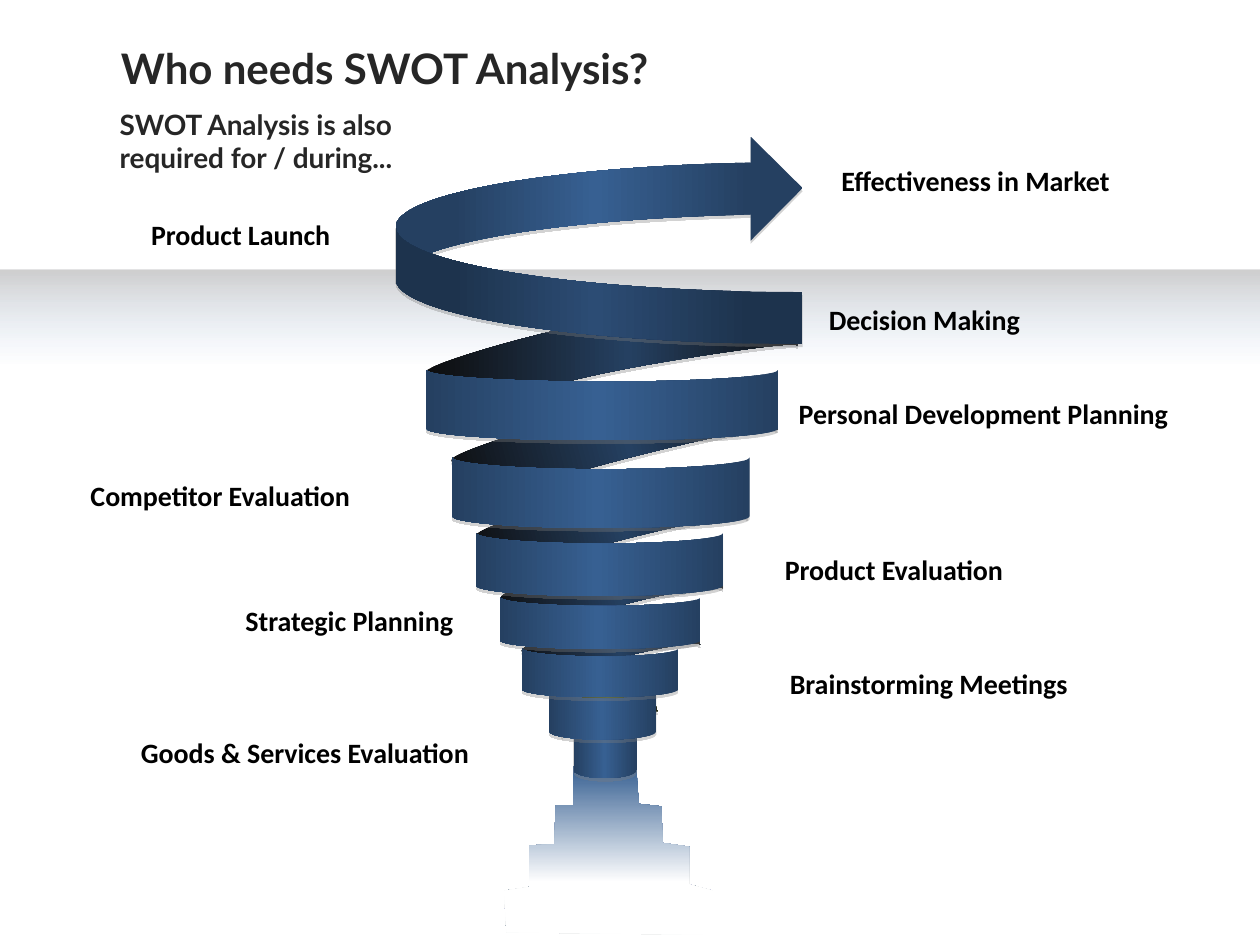
from lxml import etree
from pptx import Presentation
from pptx.dml.color import RGBColor
from pptx.enum.shapes import MSO_SHAPE
from pptx.enum.text import MSO_ANCHOR, MSO_AUTO_SIZE, PP_ALIGN
from pptx.oxml.ns import qn
from pptx.util import Inches, Pt

RECTANGLE = MSO_SHAPE.RECTANGLE
RIBBON = MSO_SHAPE.FLOWCHART_STORED_DATA
CURVED_ARROW = MSO_SHAPE.CURVED_LEFT_ARROW
LEFT = PP_ALIGN.LEFT
TOP, MIDDLE = MSO_ANCHOR.TOP, MSO_ANCHOR.MIDDLE
NO_AUTOFIT = MSO_AUTO_SIZE.NONE

COLORS = {
    "navy": "254061", "blue": "376092", "sky": "3F80CE", "black": "0D0D0D",
    "olive": "4F6228", "white": "FFFFFF", "shadow": "808080",
    "heading": "262626", "label": "000000",
}

# Gradient stops: position in percent, colour, opacity in percent
FRONT = [(0, "navy", 100), (51, "blue", 100), (100, "navy", 100)]
BACK = [(0, "black", 100), (54, "navy", 100), (100, "black", 100)]
BACK_OLIVE = [(0, "black", 100), (54, "olive", 100), (100, "black", 100)]
ARROW = [(0, "navy", 100), (13, "navy", 100), (51, "blue", 100),
         (86, "navy", 100), (100, "navy", 100)]
HORIZON = [(43, "sky", 0), (100, "black", 20)]
REFLECTION = [(0, "blue", 100), (69, "white", 100), (100, "white", 100)]

REFLECTION_OUTLINE = [
    (5.66, 7.42), (5.66, 7.07), (5.47, 7.02), (5.47, 6.72), (5.26, 6.69),
    (5.25, 6.4), (5.07, 6.38), (5.05, 6.08), (4.55, 6.08), (4.55, 6.39),
    (4.41, 6.39), (4.4, 6.7), (4.2, 6.71), (4.2, 7.04), (4, 7.07), (4.02, 7.4),
]
# Bezier curves along the lower and upper edge of the widest back ribbon
BACK_RIBBON_CURVES = [
    [(3.48, 3.35), (3.47, 3.3), (4.32, 3.06), (4.8, 2.96)],
    [(4.8, 2.96), (5.27, 2.86), (6.32, 2.7), (6.33, 2.74)],
    [(6.33, 2.74), (6.3, 2.61), (6.38, 2.5), (6.35, 2.37)],
    [(6.35, 2.37), (6.34, 2.32), (5.2, 2.46), (4.71, 2.56)],
    [(4.71, 2.56), (4.21, 2.65), (3.37, 2.9), (3.38, 2.95)],
]

# Ribbons from back to front, before rotation: left, top, width, height
LOWER_RIBBONS = [
    (BACK_OLIVE, 4.6, 5.17, 0.38, 0.78),
    (FRONT, 4.61, 5.73, 0.39, 0.5),
    (FRONT, 4.59, 5.25, 0.39, 0.85),
    (BACK, 4.65, 4.42, 0.38, 1.38),
]
UPPER_RIBBONS = [
    (BACK, 4.62, 3.81, 0.45, 1.72),
    (FRONT, 4.56, 4.15, 0.41, 1.59),
    (BACK, 4.6, 3.08, 0.49, 2.12),
    (BACK, 4.61, 2.21, 0.51, 2.56),
    (FRONT, 4.5, 1.82, 0.56, 2.79),
    (FRONT, 4.49, 2.73, 0.56, 2.36),
    (FRONT, 4.51, 3.5, 0.5, 1.96),
]
LAST_RIBBON = (FRONT, 4.57, 4.72, 0.39, 1.24)

LABELS = [
    ("Goods & Services Evaluation", 1.02, 5.79, 3.21),
    ("Brainstorming Meetings", 6.17, 5.24, 2.43),
    ("Strategic Planning", 1.85, 4.74, 2.13),
    ("Product Evaluation", 6.13, 4.34, 2.02),
    ("Competitor Evaluation", 0.62, 3.75, 2.36),
    ("Personal Development Planning", 6.24, 3.1, 3.31),
    ("Decision Making", 6.48, 2.35, 1.77),
    ("Product Launch", 1.1, 1.68, 1.98),
    ("Effectiveness in Market", 6.58, 1.25, 2.75),
]


def curve_points(curve, steps=12):
    """Return points along a cubic Bezier curve."""
    points = []
    for step in range(steps + 1):
        t = step / steps
        weights = ((1 - t) ** 3, 3 * t * (1 - t) ** 2, 3 * t * t * (1 - t), t ** 3)
        points.append(tuple(sum(weight * point[axis] for weight, point in zip(weights, curve))
                            for axis in (0, 1)))
    return points


class SlideBuilder:
    def __init__(self, slide):
        self.slide = slide
        self.label_font, self.heading_font = "Calibri", "Lato"

    def add_color(self, parent, name, opacity):
        color = etree.SubElement(parent, qn("a:srgbClr"), val=COLORS[name])
        if opacity < 100:
            etree.SubElement(color, qn("a:alpha"), val=str(opacity * 1000))

    def style(self, shape, stops, angle, shadow=True):
        """Apply a gradient with a clockwise angle, no line and a hard shadow."""
        shape.line.fill.background()
        shape.fill.gradient()
        shape.fill.gradient_angle = (360 - angle) % 360
        properties = shape._element.spPr
        stop_list = properties.find(qn("a:gradFill")).find(qn("a:gsLst"))
        for stop in list(stop_list):
            stop_list.remove(stop)
        for position, name, opacity in stops:
            stop = etree.SubElement(stop_list, qn("a:gs"), pos=str(position * 1000))
            self.add_color(stop, name, opacity)
        shape.shadow.inherit = False
        if shadow:
            outer = etree.SubElement(properties.find(qn("a:effectLst")), qn("a:outerShdw"),
                                     blurRad="0", dist=str(Pt(1.8)), dir="5400000",
                                     algn="t", rotWithShape="0")
            self.add_color(outer, "shadow", 35)

    def preset(self, kind, left, top, width, height, stops, angle,
               rotation=0, flip=None, shadow=True):
        shape = self.slide.shapes.add_shape(
            kind, Inches(left), Inches(top), Inches(width), Inches(height))
        shape.rotation = rotation
        if flip:
            shape._element.spPr.find(qn("a:xfrm")).set(flip, "1")
        self.style(shape, stops, angle, shadow)
        return shape

    def ribbon(self, stops, left, top, width, height):
        rotation, flip = (90, "flipH") if stops is FRONT else (75.2, "flipV")
        self.preset(RIBBON, left, top, width, height, stops, 90, rotation, flip)

    def outline(self, points, stops, angle, shadow=True):
        corners = [(Inches(x), Inches(y)) for x, y in points]
        builder = self.slide.shapes.build_freeform(*corners[0])
        builder.add_line_segments(corners[1:], close=True)
        self.style(builder.convert_to_shape(), stops, angle, shadow)

    def set_text(self, shape, text, font, size, color, anchor=TOP):
        frame = shape.text_frame
        frame.word_wrap = True
        frame.auto_size = NO_AUTOFIT
        frame.vertical_anchor = anchor
        paragraph = frame.paragraphs[0]
        paragraph.alignment = LEFT
        paragraph.space_before = Pt(0)
        run = paragraph.add_run()
        run.text = text
        run.font.name, run.font.size, run.font.bold = font, Pt(size), True
        run.font.color.rgb = RGBColor.from_string(COLORS[color])
        return paragraph

    def heading(self, index, text, left, top, width, height, size, anchor):
        shape = self.slide.placeholders[index]
        shape.left, shape.top = Inches(left), Inches(top)
        shape.width, shape.height = Inches(width), Inches(height)
        paragraph = self.set_text(shape, text, self.heading_font, size, "heading", anchor)
        properties = paragraph._p.get_or_add_pPr()
        properties.set("marL", "0")
        properties.set("indent", "0")
        etree.SubElement(properties, qn("a:buNone"))

    def label(self, text, left, top, width):
        shape = self.slide.shapes.add_textbox(
            Inches(left), Inches(top), Inches(width), Inches(0.37))
        self.set_text(shape, text, self.label_font, 16, "label")


def main():
    presentation = Presentation()
    presentation.slide_width, presentation.slide_height = Inches(10), Inches(7.5)
    builder = SlideBuilder(presentation.slides.add_slide(presentation.slide_layouts[1]))

    # Headings
    builder.heading(0, "Who needs SWOT Analysis?", 0.86, 0.28, 5.82, 0.51, 24, MIDDLE)
    builder.heading(1, "SWOT Analysis is also required for / during...",
                    0.85, 0.8, 2.91, 0.64, 16, TOP)

    # Horizon and reflection
    builder.preset(RECTANGLE, 0, 2.14, 10, 1.32, HORIZON, 270, shadow=False)
    builder.outline(REFLECTION_OUTLINE, REFLECTION, 90, shadow=False)

    # Spiral, from back to front
    for ribbon in LOWER_RIBBONS:
        builder.ribbon(*ribbon)
    back_ribbon = [point for curve in BACK_RIBBON_CURVES for point in curve_points(curve)]
    builder.outline(back_ribbon, BACK, 0)
    for ribbon in UPPER_RIBBONS:
        builder.ribbon(*ribbon)
    arrow = builder.preset(CURVED_ARROW, 3.14, 1.08, 3.23, 1.65, ARROW, 0, rotation=180)
    for index, value in enumerate((0.25, 0.5, 0.25)):
        arrow.adjustments[index] = value
    builder.ribbon(*LAST_RIBBON)

    # Labels
    for label in LABELS:
        builder.label(*label)

    presentation.save("out.pptx")


if __name__ == "__main__":
    main()
